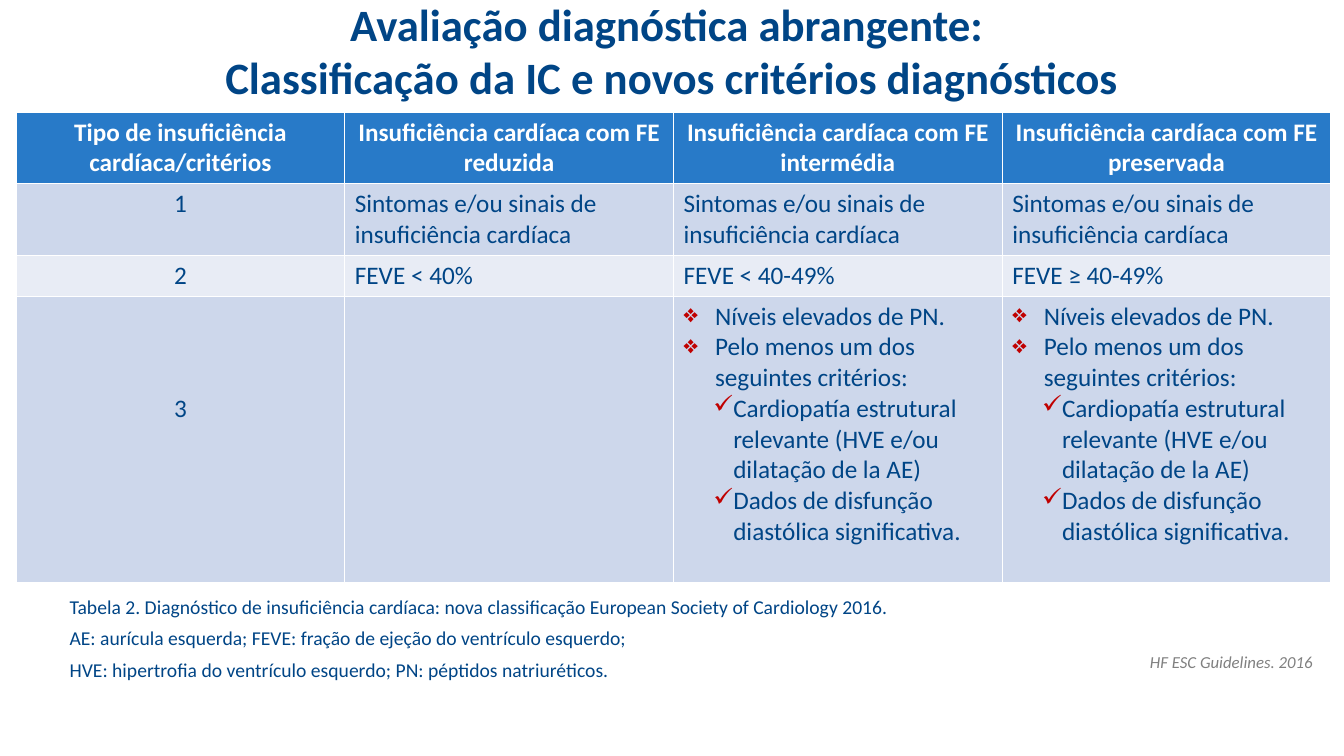
from lxml import etree
from pptx import Presentation
from pptx.dml.color import RGBColor
from pptx.enum import text
from pptx.oxml import ns
from pptx.util import Pt

COLORS = {"navy": "004586", "gray": "808080", "white": "FFFFFF", "red": "C00000",
          "header": "287AC8", "dark band": "CDD7EB", "light band": "E8ECF5"}
CENTER, RIGHT = text.PP_ALIGN.CENTER, text.PP_ALIGN.RIGHT

TITLE = "Avaliação diagnóstica abrangente: \vClassificação da IC e novos critérios diagnósticos"
NOTES = [
    "Tabela 2. Diagnóstico de insuficiência cardíaca: nova classificação European Society of Cardiology 2016.",
    "AE: aurícula esquerda; FEVE: fração de ejeção do ventrículo esquerdo;",
    "HVE: hipertrofia do ventrículo esquerdo; PN: péptidos natriuréticos.",
]
SOURCE = ["HF ESC Guidelines. 2016"]
SYMPTOMS = "Sintomas e/ou sinais de insuficiência cardíaca"
CRITERIA = [
    ("❖", "Níveis elevados de PN."),
    ("❖", "Pelo menos um dos seguintes critérios:"),
    ("✓", "Cardiopatía estrutural relevante (HVE e/ou dilatação de la AE)"),
    ("✓", "Dados de disfunção diastólica significativa."),
]
BULLET_INDENTS = {"❖": (22.5, -22.5), "✓": (35.5, -14.2)}
ROWS = [
    ["Tipo de insuficiência cardíaca/critérios"]
    + [f"Insuficiência cardíaca com FE {kind}" for kind in ("reduzida", "intermédia", "preservada")],
    ["1"] + [SYMPTOMS] * 3,
    ["2", "FEVE < 40%", "FEVE < 40-49%", "FEVE ≥ 40-49%"],
    ["3", "", CRITERIA, CRITERIA],
]
ROW_FILLS = ["header", "dark band", "light band", "dark band"]
ROW_HEIGHTS = [50.8, 50.8, 29.2, 205]
COLUMN_WIDTH = 234.8


def set_font(font, size, color="navy", **format_values):
    values = {"name": "Calibri", "size": Pt(size), "bold": False} | format_values
    for name, value in values.items():
        setattr(font, name, value)
    font.color.rgb = RGBColor.from_string(COLORS[color])


def set_bullet(paragraph, symbol=None, left=0, hanging=0):
    """Set indents and a red bullet, or no bullet without a symbol."""
    properties = paragraph._p.get_or_add_pPr()
    properties.set("marL", str(Pt(left)))
    properties.set("indent", str(Pt(hanging)))
    if symbol is None:
        etree.SubElement(properties, ns.qn("a:buNone"))
        return
    color = etree.SubElement(properties, ns.qn("a:buClr"))
    etree.SubElement(color, ns.qn("a:srgbClr"), val=COLORS["red"])
    etree.SubElement(properties, ns.qn("a:buChar"), char=symbol)


def place(shape, left, top, width, height):
    box = {"left": left, "top": top, "width": width, "height": height}
    for name, value in box.items():
        setattr(shape, name, Pt(value))
    shape.text_frame.word_wrap = True
    shape.text_frame.auto_size = text.MSO_AUTO_SIZE.NONE


def fill_title(title):
    place(title, 48, 12, 864, 47.5)
    title.text_frame.vertical_anchor = text.MSO_ANCHOR.MIDDLE
    title.text_frame.text = TITLE
    paragraph = title.text_frame.paragraphs[0]
    paragraph.alignment = CENTER
    for run in paragraph.runs:
        set_font(run.font, 32, bold=True)


def fill_body(body, lines, box, indent=0, alignment=None, **font_values):
    place(body, *box)
    body.text_frame.text = "\n".join(lines)
    for index, paragraph in enumerate(body.text_frame.paragraphs):
        set_bullet(paragraph, left=indent)
        paragraph.space_before = Pt(6 if index else 0)
        paragraph.alignment = alignment
        set_font(paragraph.runs[0].font, **font_values)


def fill_cell(cell, content, fill, alignment, **font_values):
    cell.fill.solid()
    cell.fill.fore_color.rgb = RGBColor.from_string(COLORS[fill])
    items = content if isinstance(content, list) else [(None, content)]
    cell.text_frame.text = "\n".join(line for _, line in items)
    for paragraph, (symbol, _) in zip(cell.text_frame.paragraphs, items):
        if symbol:
            set_bullet(paragraph, symbol, *BULLET_INDENTS[symbol])
        paragraph.alignment = alignment
        set_font(paragraph.font, 18, **font_values)
        for run in paragraph.runs:
            set_font(run.font, 18, **font_values)


def add_criteria_table(slide):
    frame = slide.shapes.add_table(len(ROWS), len(ROWS[0]), Pt(11.5), Pt(80),
                                   Pt(COLUMN_WIDTH * len(ROWS[0])), Pt(sum(ROW_HEIGHTS)))
    table = frame.table
    for column in table.columns:
        column.width = Pt(COLUMN_WIDTH)
    for i, (contents, fill, height) in enumerate(zip(ROWS, ROW_FILLS, ROW_HEIGHTS)):
        table.rows[i].height = Pt(height)
        header = i == 0
        for j, content in enumerate(contents):
            fill_cell(table.cell(i, j), content, fill, CENTER if header or j == 0 else None,
                      color="white" if header else "navy", bold=header)
    table.cell(3, 0).margin_top = Pt(69.5)


def main():
    presentation = Presentation()
    presentation.slide_width, presentation.slide_height = Pt(960), Pt(540)
    slide = presentation.slides.add_slide(presentation.slide_layouts.get_by_name("Two Content"))
    title, notes, source = slide.placeholders
    fill_body(notes, NOTES, (0, 421, 922, 70.5), indent=42.5, size=14)
    fill_body(source, SOURCE, (33, 462, 912, 23), alignment=RIGHT,
              size=12, color="gray", italic=True)
    fill_title(title)
    add_criteria_table(slide)
    presentation.save("out.pptx")


if __name__ == "__main__":
    main()
